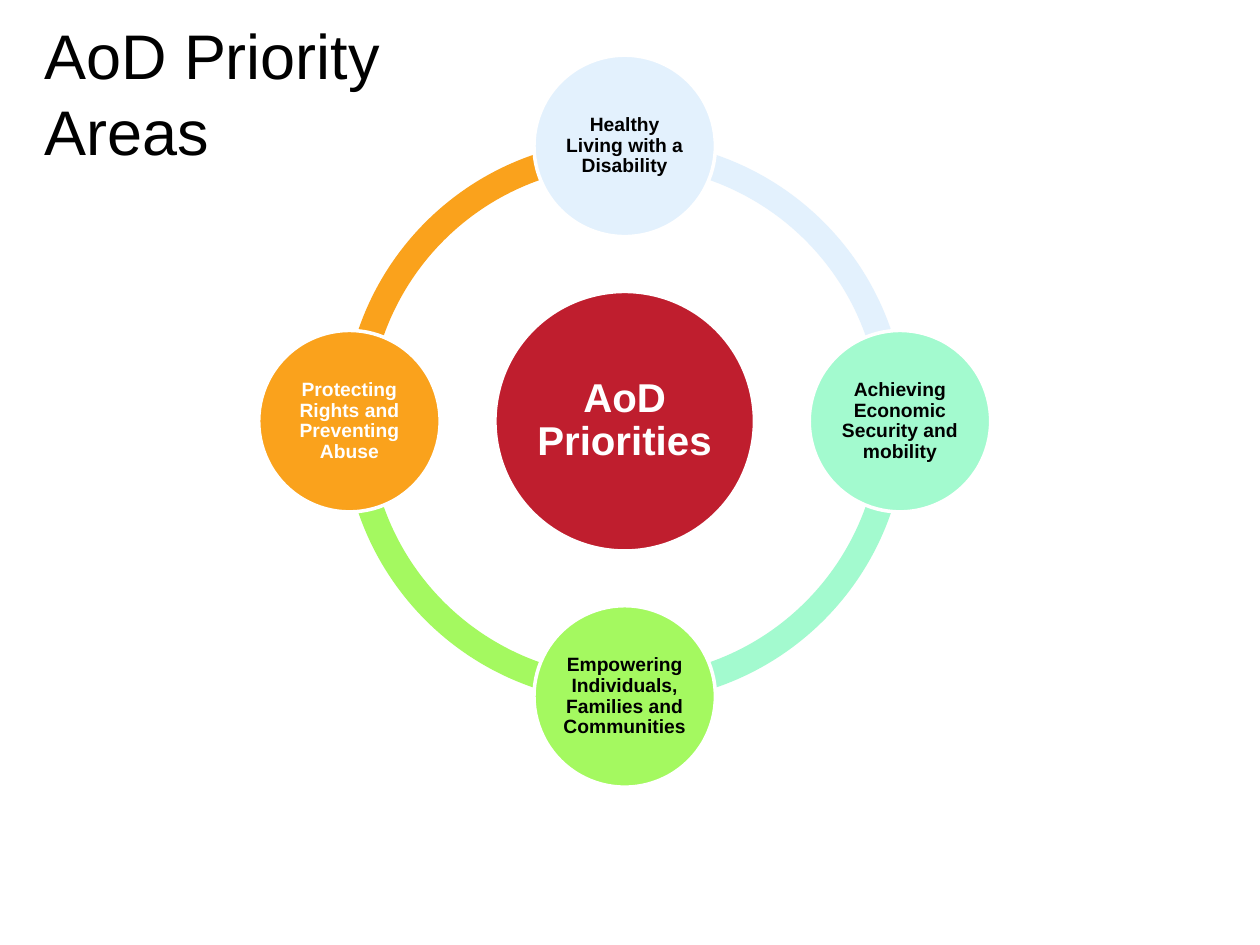
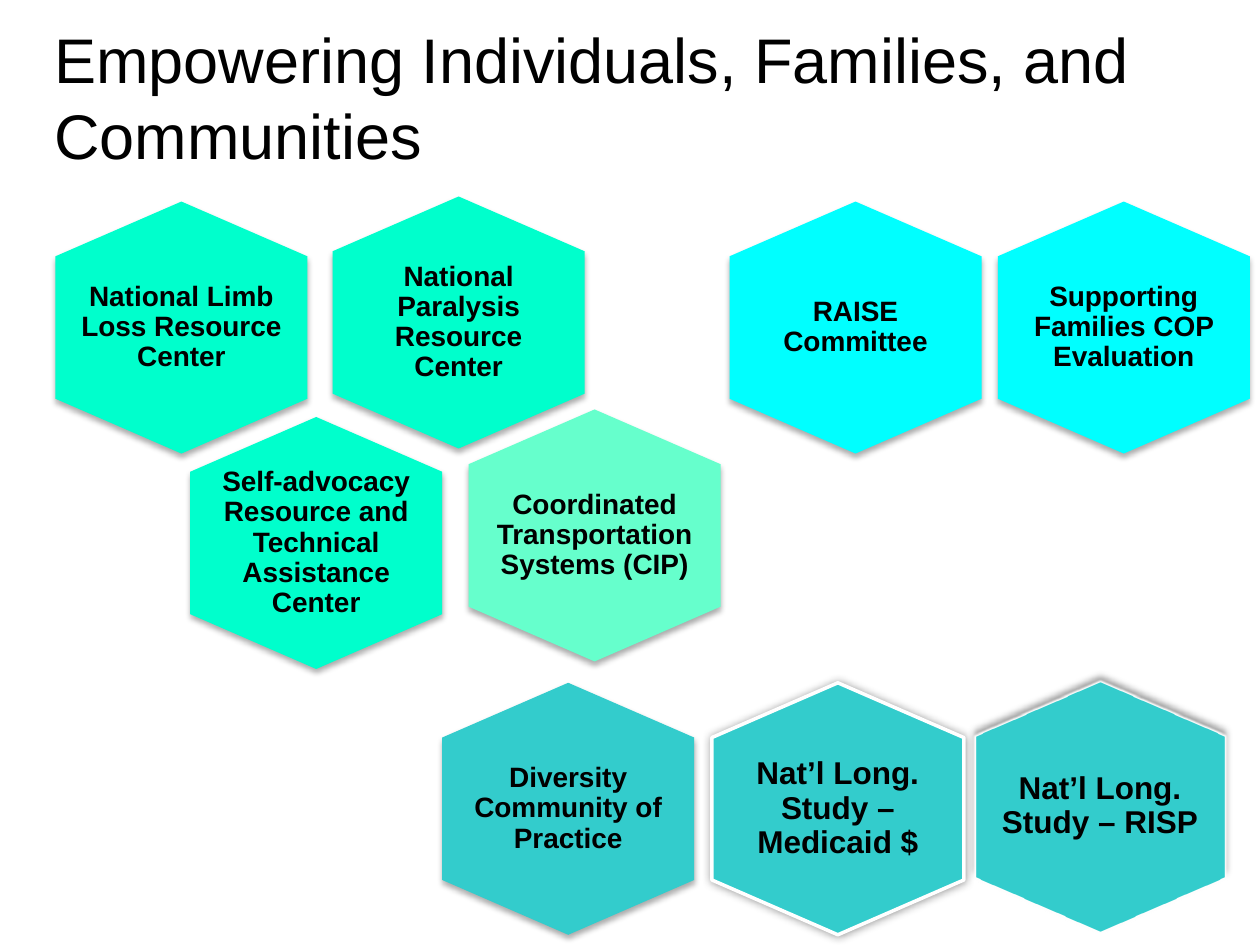
from math import cos, radians, sin

from lxml.etree import SubElement
from pptx import Presentation
from pptx.dml.color import RGBColor
from pptx.enum.shapes import MSO_SHAPE
from pptx.enum.text import MSO_ANCHOR, MSO_AUTO_SIZE, PP_ALIGN
from pptx.oxml.ns import qn
from pptx.util import Pt

OVAL, BLOCK_ARC = MSO_SHAPE.OVAL, MSO_SHAPE.BLOCK_ARC
TOP, MIDDLE = MSO_ANCHOR.TOP, MSO_ANCHOR.MIDDLE
LEFT, CENTER = PP_ALIGN.LEFT, PP_ALIGN.CENTER
NO_AUTOFIT = MSO_AUTO_SIZE.NONE

FONT = "Arial"
BLACK, WHITE, RED = "000000", "FFFFFF", "BF1E2E"
ICE, MINT, LIME, ORANGE = "E3F1FD", "A3FACF", "A4F960", "FAA21C"
CYAN, AQUA, PALE_AQUA, TEAL = "00FFFF", "00FFCC", "66FFCC", "33CCCC"

# Priority areas with their fill and text colours, clockwise from the top
PRIORITIES = [
    ("Healthy Living with a Disability", ICE, BLACK),
    ("Achieving Economic Security and mobility", MINT, BLACK),
    ("Empowering Individuals, Families and Communities", LIME, BLACK),
    ("Protecting Rights and Preventing Abuse", ORANGE, WHITE),
]

# Left, top, fill and text of each programme
PROGRAMMES = [
    (416.9, 115.2, CYAN, "RAISE Committee"),
    (570.2, 115.2, CYAN, "Supporting Families COP Evaluation"),
    (108.7, 238.3, AQUA, "Self-advocacy Resource and Technical Assistance Center"),
    (252.7, 390.2, TEAL, "Diversity Community of Practice"),
    (31.7, 115.2, AQUA, "National Limb Loss Resource Center"),
    (267.8, 234, PALE_AQUA, "Coordinated Transportation Systems (CIP)"),
    (190.1, 112.3, AQUA, "National Paralysis Resource Center"),
]

# Left, top, text, shadow (opacity, blur, distance, angle) and soft edge
STUDIES = [
    (406.8, 390.2, "Nat’l Long. Study – Medicaid $", (40, 5, 0, 0), 0),
    (556.6, 388.8, "Nat’l Long. Study – RISP", (40, 4, 3, 270), 1),
]
HEXAGON_SIZE = 144
HEXAGON_SHOULDER = 31.3
PROGRAMME_SHADOW = (32, 3.5, 2.2, 90)


def color(hex_string):
    return RGBColor.from_string(hex_string)


def paint(shape, fill, outline=None):
    shape.shadow.inherit = False
    shape.fill.solid()
    shape.fill.fore_color.rgb = color(fill)
    if outline:
        shape.line.color.rgb = color(outline)
        shape.line.width = Pt(2)
    else:
        shape.line.fill.background()


def write(shape, text, size, text_color=BLACK, bold=True, align=CENTER,
          anchor=MIDDLE, spacing=0.9, insets=(1, 1)):
    """Fill a shape with one paragraph; insets are horizontal and vertical."""
    frame = shape.text_frame
    frame.word_wrap = True
    frame.auto_size = NO_AUTOFIT
    frame.vertical_anchor = anchor
    frame.margin_left = frame.margin_right = Pt(insets[0])
    frame.margin_top = frame.margin_bottom = Pt(insets[1])
    frame.text = text
    paragraph = frame.paragraphs[0]
    paragraph.alignment = align
    paragraph.line_spacing = spacing
    paragraph.font.name = FONT
    paragraph.font.size = Pt(size)
    paragraph.font.bold = bold
    paragraph.font.color.rgb = color(text_color)


def add_titled_slide(presentation, text, left, top, width):
    slide = presentation.slides.add_slide(presentation.slide_layouts[5])
    title = slide.shapes.title
    title.left, title.top = Pt(left), Pt(top)
    title.width, title.height = Pt(width), Pt(94.3)
    write(title, text, 36, bold=False, align=LEFT, anchor=TOP,
          spacing=Pt(43.4), insets=(7.2, 3.6))
    return slide


def add_centered(slide, kind, center_x, center_y, size):
    return slide.shapes.add_shape(kind, Pt(center_x - size / 2),
                                  Pt(center_y - size / 2), Pt(size), Pt(size))


def add_priority_wheel(slide, center_x, center_y):
    ring_size, hub_size, node_size, orbit = 321.8, 148.3, 103.7, 157.3
    step = 360 / len(PRIORITIES)
    angles = [(270 + step * index) % 360 for index in range(len(PRIORITIES))]

    for angle, (_, fill, _) in reversed(list(zip(angles, PRIORITIES))):
        arc = add_centered(slide, BLOCK_ARC, center_x, center_y, ring_size)
        # Angles are stored in 60000ths of a degree, adjustments in 100000ths
        arc.adjustments[0] = angle * 0.6
        arc.adjustments[1] = (angle + step) % 360 * 0.6
        arc.adjustments[2] = 0.046
        paint(arc, fill)

    hub = add_centered(slide, OVAL, center_x, center_y, hub_size)
    paint(hub, RED, WHITE)
    write(hub, "AoD Priorities", 23, WHITE)

    for angle, (text, fill, text_color) in zip(angles, PRIORITIES):
        node = add_centered(slide, OVAL,
                            center_x + orbit * cos(radians(angle)),
                            center_y + orbit * sin(radians(angle)), node_size)
        paint(node, fill, WHITE)
        write(node, text, 11, text_color)


def add_effects(shape, shadow, soft_edge):
    opacity, blur, distance, angle = shadow
    effects = shape._element.spPr.find(qn("a:effectLst"))
    outer = SubElement(effects, qn("a:outerShdw"), blurRad=str(Pt(blur)),
                       dist=str(Pt(distance)), dir=str(angle * 60000),
                       rotWithShape="0")
    black = SubElement(outer, qn("a:srgbClr"), val=BLACK)
    SubElement(black, qn("a:alpha"), val=str(opacity * 1000))
    if soft_edge:
        SubElement(effects, qn("a:softEdge"), rad=str(Pt(soft_edge)))


def add_hexagon(slide, left, top, fill, text, size, insets, shadow,
                outline=None, soft_edge=0):
    middle, right = left + HEXAGON_SIZE / 2, left + HEXAGON_SIZE
    bottom = top + HEXAGON_SIZE
    upper, lower = top + HEXAGON_SHOULDER, bottom - HEXAGON_SHOULDER
    corners = [(right, upper), (right, lower), (middle, bottom),
               (left, lower), (left, upper)]
    builder = slide.shapes.build_freeform(Pt(middle), Pt(top))
    builder.add_line_segments([(Pt(x), Pt(y)) for x, y in corners], close=True)
    hexagon = builder.convert_to_shape()
    paint(hexagon, fill, outline)
    add_effects(hexagon, shadow, soft_edge)
    write(hexagon, text, size, insets=insets)


def add_programme_hexagons(slide):
    for left, top, fill, text in PROGRAMMES:
        add_hexagon(slide, left, top, fill, text, 16, (9.4, 10.8),
                    PROGRAMME_SHADOW)
    for left, top, text, shadow, soft_edge in STUDIES:
        add_hexagon(slide, left, top, TEAL, text, 18, (6.5, 7.2), shadow,
                    WHITE, soft_edge)


def main():
    presentation = Presentation()
    presentation.slide_width, presentation.slide_height = Pt(720), Pt(540)

    slide = add_titled_slide(presentation, "AoD Priority Areas", 18, 5.8, 234)
    add_priority_wheel(slide, 357, 240.7)

    slide = add_titled_slide(
        presentation, "Empowering Individuals, Families, and Communities",
        23.8, 7.9, 667.4)
    add_programme_hexagons(slide)

    presentation.save("out.pptx")


if __name__ == "__main__":
    main()
